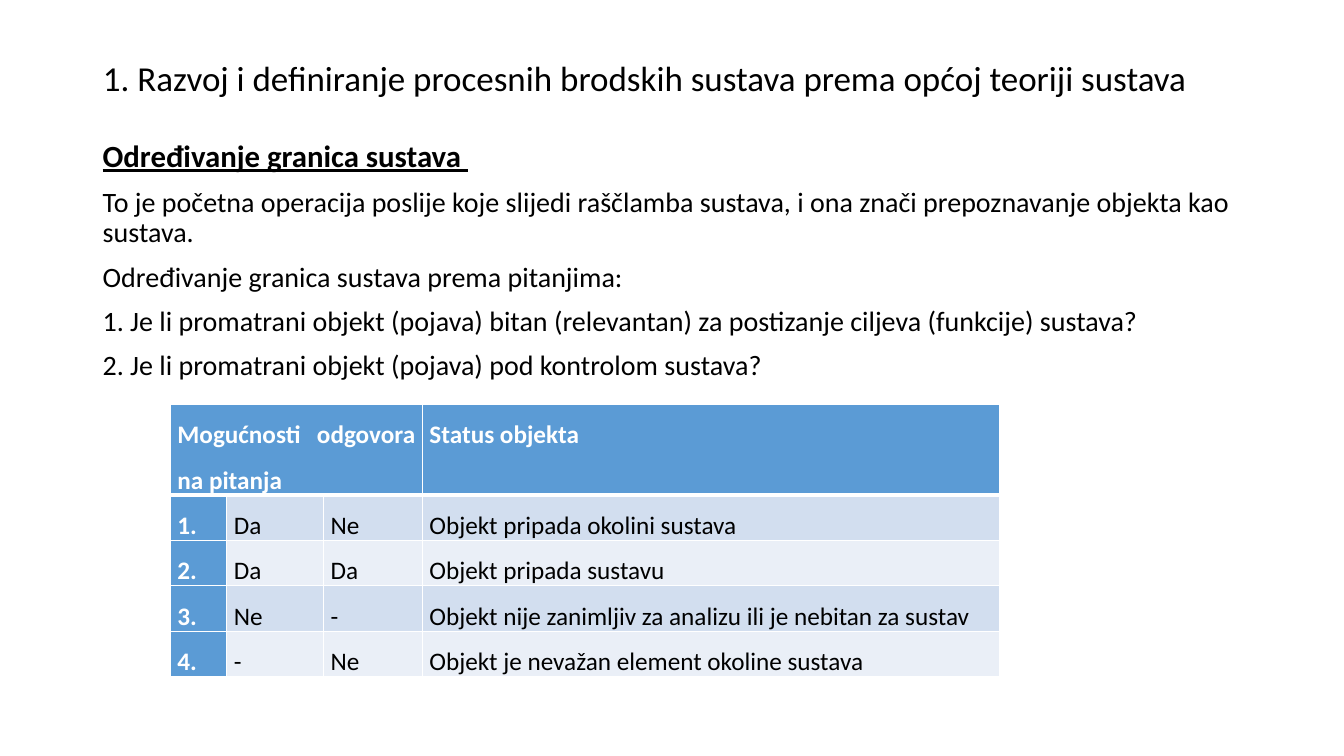
from lxml.etree import SubElement
from pptx import Presentation
from pptx.dml.color import RGBColor
from pptx.enum.text import MSO_ANCHOR, MSO_AUTO_SIZE, PP_ALIGN
from pptx.oxml.ns import qn
from pptx.util import Inches, Pt

COLORS = {
    "text": "000000",
    "white": "FFFFFF",
    "header": "5B9BD5",
    "band_dark": "D2DEEF",
    "band_light": "EAEFF7",
}

TITLE = "1. Razvoj i definiranje procesnih brodskih sustava prema općoj teoriji sustava"
HEADING = "Određivanje granica sustava "
BODY = [
    "To je početna operacija poslije koje slijedi raščlamba sustava, "
    "i ona znači prepoznavanje objekta kao sustava.",
    "Određivanje granica sustava prema pitanjima:",
    "1. Je li promatrani objekt (pojava) bitan (relevantan) za postizanje ciljeva (funkcije) sustava?",
    "2. Je li promatrani objekt (pojava) pod kontrolom sustava?",
]
COL_WIDTHS = [0.56, 0.96, 0.98, 5.72]
ROW_HEIGHT = 0.43
ROWS = [
    ["Mogućnosti odgovora na pitanja", "", "", "Status objekta"],
    ["1.", "Da", "Ne", "Objekt pripada okolini sustava"],
    ["2.", "Da", "Da", "Objekt pripada sustavu"],
    ["3.", "Ne", "-", "Objekt nije zanimljiv za analizu ili je nebitan za sustav"],
    ["4.", "-", "Ne", "Objekt je nevažan element okoline sustava"],
]


def rgb(name):
    return RGBColor.from_string(COLORS[name])


class SlideBuilder:
    """Holds the text style and the current slide."""

    font = "Calibri"

    def __init__(self, prs):
        self.slide = prs.slides.add_slide(prs.slide_layouts[5])

    def style(self, p, size, color="text", bold=False, underline=False,
              align=PP_ALIGN.LEFT, spacing=0.9, before=0):
        p.alignment, p.line_spacing, p.space_before = align, spacing, Pt(before)
        f = p.font
        f.name, f.size, f.bold, f.underline = self.font, Pt(size), bold, underline
        f.color.rgb = rgb(color)

    def title(self, text, left, top, width, height):
        sp = self.slide.shapes.title
        sp.left, sp.top, sp.width, sp.height = map(Inches, (left, top, width, height))
        tf = sp.text_frame
        tf.text = text
        tf.auto_size = MSO_AUTO_SIZE.NONE
        tf.vertical_anchor = MSO_ANCHOR.MIDDLE
        self.style(tf.paragraphs[0], 25)

    def body(self, heading, lines, left, top, width, height):
        sp = self.slide.shapes.add_textbox(*map(Inches, (left, top, width, height)))
        tf = sp.text_frame
        tf.word_wrap = True
        p = tf.paragraphs[0]
        p.text = heading
        self.style(p, 22, bold=True, underline=True, before=10)
        for line in lines:
            p = tf.add_paragraph()
            p.text = line
            self.style(p, 20, before=10)

    def borders(self, cell, bottom):
        tc_pr = cell._tc.get_or_add_tcPr()
        for side, width in (("L", 1), ("R", 1), ("T", 1), ("B", bottom)):
            ln = SubElement(tc_pr, qn(f"a:ln{side}"), w=str(Pt(width)))
            fill = SubElement(ln, qn("a:solidFill"))
            SubElement(fill, qn("a:srgbClr"), val=COLORS["white"])

    def cell(self, cell, text, fill, is_header, bottom):
        cell.margin_left = cell.margin_right = Inches(0.07)
        cell.margin_top = cell.margin_bottom = 0
        self.borders(cell, bottom)
        cell.fill.solid()
        cell.fill.fore_color.rgb = rgb(fill)
        p = cell.text_frame.paragraphs[0]
        p.text = text
        self.style(p, 18, "white" if is_header else "text", bold=is_header,
                   align=PP_ALIGN.JUSTIFY, spacing=1.5)

    def table(self, rows, col_widths, row_height, left, top):
        frame = self.slide.shapes.add_table(
            len(rows), len(col_widths), Inches(left), Inches(top),
            Inches(sum(col_widths)), Inches(row_height * len(rows)))
        table = frame.table
        for column, width in zip(table.columns, col_widths):
            column.width = Inches(width)
        for i, row in enumerate(rows):
            table.rows[i].height = Inches(row_height)
            band = "band_dark" if i % 2 else "band_light"
            for j, text in enumerate(row):
                is_header = i == 0 or j == 0
                self.cell(table.cell(i, j), text, "header" if is_header else band,
                          is_header, bottom=3 if i == 0 else 1)
        table.cell(0, 0).merge(table.cell(0, 2))


def main():
    prs = Presentation()
    prs.slide_width, prs.slide_height = Inches(13.33), Inches(7.5)
    s = SlideBuilder(prs)

    # Title and explanatory text
    s.title(TITLE, 0.92, 0.4, 11.5, 0.79)
    s.body(HEADING, BODY, 0.92, 1.35, 11.5, 5.41)

    # Answers and the resulting status
    s.table(ROWS, COL_WIDTHS, ROW_HEIGHT, 1.69, 4.01)

    prs.save("out.pptx")


if __name__ == "__main__":
    main()
